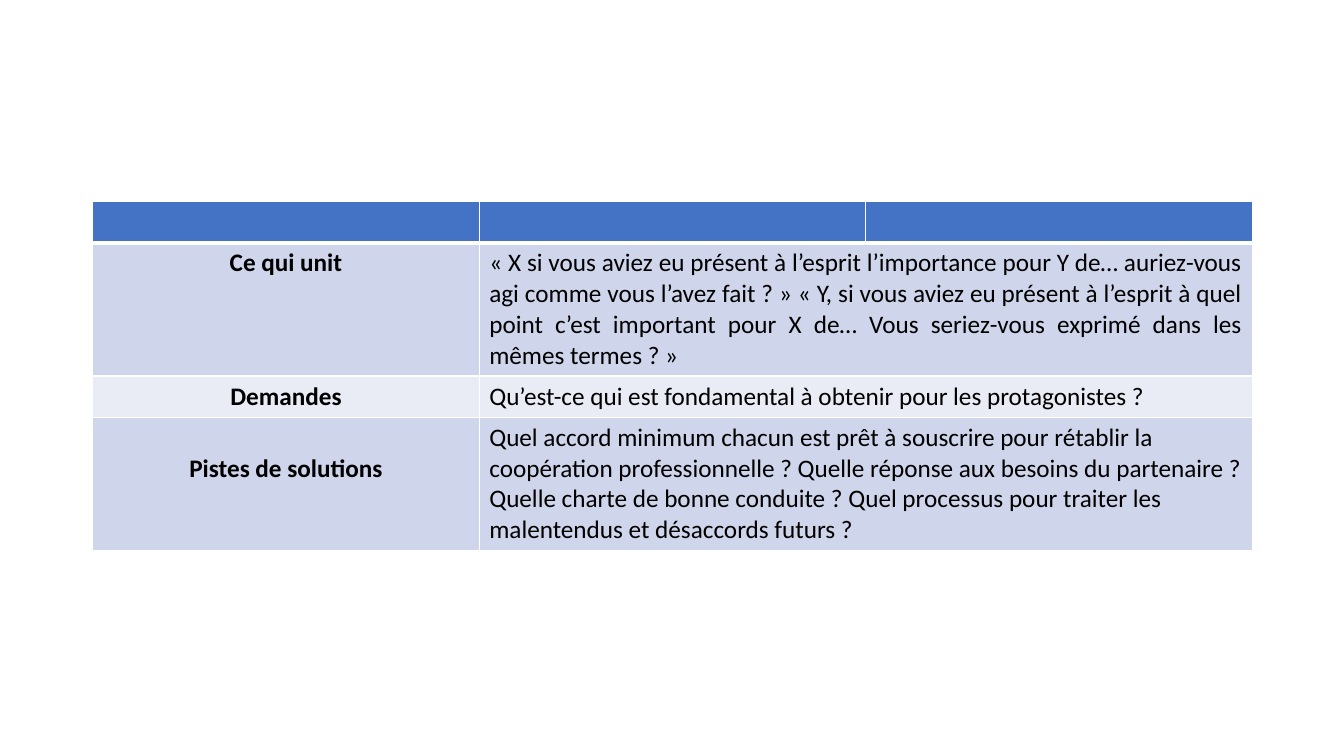
"""Build a slide with a three-row table of mediation questions."""
from lxml import etree
from pptx import Presentation
from pptx.dml.color import RGBColor
from pptx.enum.text import PP_ALIGN
from pptx.oxml.ns import qn
from pptx.util import Inches, Pt

CENTER, JUSTIFY, LEFT = PP_ALIGN.CENTER, PP_ALIGN.JUSTIFY, PP_ALIGN.LEFT
COLORS = {
    "header": "4472C4",
    "dark band": "CFD5EA",
    "light band": "E9EBF5",
    "border": "FFFFFF",
    "text": "000000",
}
COLUMNS = 3
COLUMN_WIDTH = 11.5 / COLUMNS
SHORT_ROW, TALL_ROW = 0.41, 1.31
HEIGHTS = [SHORT_ROW, TALL_ROW, SHORT_ROW, TALL_ROW]
LINE_HEIGHT, CELL_MARGIN = 0.305, 0.05
TOPICS = [
    ("Ce qui unit", 0, JUSTIFY,
     "« X si vous aviez eu présent à l’esprit l’importance pour Y de… "
     "auriez-vous agi comme vous l’avez fait ? » « Y, si vous aviez eu "
     "présent à l’esprit à quel point c’est important pour X de… Vous "
     "seriez-vous exprimé dans les mêmes termes ? » "),
    ("Demandes", 0, LEFT,
     "Qu’est-ce qui est fondamental à obtenir pour les protagonistes ?"),
    ("Pistes de solutions", 1, LEFT,
     "Quel accord minimum chacun est prêt à souscrire pour rétablir la "
     "coopération professionnelle ? Quelle réponse aux besoins du "
     "partenaire ? Quelle charte de bonne conduite ? Quel processus pour "
     "traiter les malentendus et désaccords futurs ?"),
]


def style_cell(cell, fill, top, bottom):
    cell.fill.solid()
    cell.fill.fore_color.rgb = RGBColor.from_string(COLORS[fill])
    tcPr = cell._tc.get_or_add_tcPr()
    sides = [("L", 1), ("R", 1), ("T", top), ("B", bottom)]
    for i, (side, width) in enumerate(sides):
        ln = etree.Element(qn(f"a:ln{side}"), w=str(Pt(width)))
        solid = etree.SubElement(ln, qn("a:solidFill"))
        etree.SubElement(solid, qn("a:srgbClr"), val=COLORS["border"])
        tcPr.insert(i, ln)


def write_cell(cell, text, align, bold):
    p = cell.text_frame.paragraphs[0]
    p.alignment = align
    r = p.add_run()
    r.text = text
    r.font.name = "Calibri"
    r.font.size = Pt(18)
    r.font.bold = bold
    r.font.color.rgb = RGBColor.from_string(COLORS["text"])


prs = Presentation()
prs.slide_width, prs.slide_height = Inches(13.33), Inches(7.5)
s = prs.slides.add_slide(prs.slide_layouts[6])

table = s.shapes.add_table(
    len(HEIGHTS), COLUMNS, Inches(0.92), Inches(2),
    Inches(COLUMN_WIDTH * COLUMNS), Inches(sum(HEIGHTS))).table
for column in table.columns:
    column.width = Inches(COLUMN_WIDTH)
for row, height in zip(table.rows, HEIGHTS):
    row.height = Inches(height)

for cell in table.rows[0].cells:
    style_cell(cell, "header", 1, 3)

for i, (topic, lines_above, align, question) in enumerate(TOPICS, 1):
    label, answer = table.cell(i, 0), table.cell(i, 1)
    answer.merge(table.cell(i, COLUMNS - 1))
    for cell in (label, answer):
        style_cell(cell, "dark band" if i % 2 else "light band",
                   3 if i == 1 else 1, 1)
    label.margin_top = Inches(CELL_MARGIN + lines_above * LINE_HEIGHT)
    write_cell(label, topic, CENTER, True)
    write_cell(answer, question, align, False)

prs.save("out.pptx")
